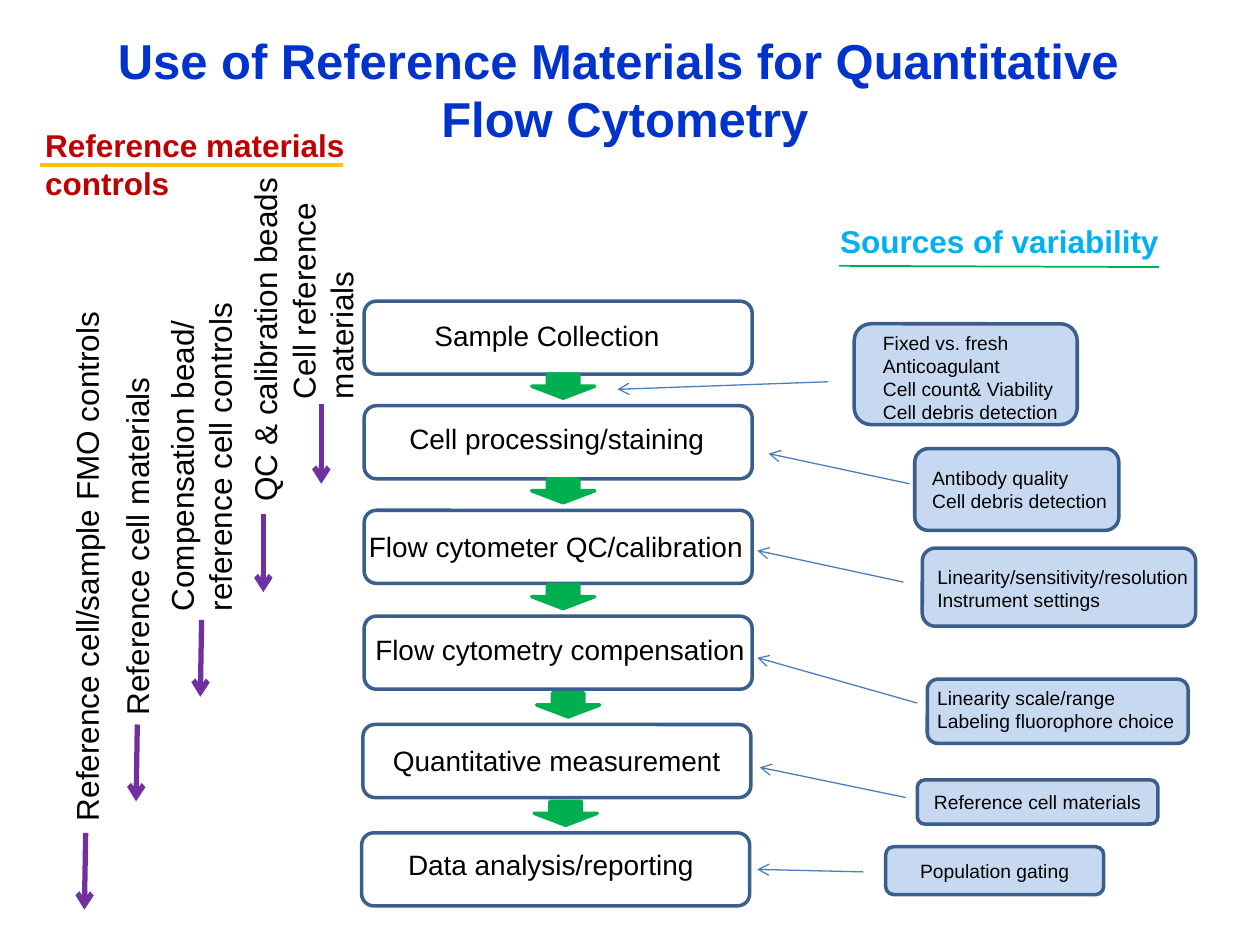
"""Build the slide on reference materials for quantitative flow cytometry."""
import pptx
import pptx.dml.color
import pptx.enum.shapes
import pptx.enum.text
import pptx.oxml
import pptx.oxml.ns
import pptx.util

SHAPE = pptx.enum.shapes.MSO_SHAPE
ALIGN = pptx.enum.text.PP_ALIGN
ANCHOR = pptx.enum.text.MSO_ANCHOR
FONT = "Arial"
COLORS = {
    "title": "0033CC", "text": "000000", "controls": "C00000", "sources": "00B0F0",
    "border": "3A5F8C", "note": "C6D9F1", "green": "00B050", "gold": "FFC000",
    "purple": "7030A0", "link": "4B7EBC",
}

TITLE = ["Use of Reference Materials for Quantitative ", "Flow Cytometry"]
HEADINGS = [
    (["Reference materials", "controls"], (0.26, 0.95, 2.69, 0.71), "controls"),
    (["Sources of variability"], (6.57, 1.71, 3.53, 0.4), "sources"),
]
RULES = [
    ((0.32, 1.31), (2.72, 1.31), "gold", 2.25),
    ((6.66, 2.11), (9.2, 2.12), "green", 1),
]

STEP_W, STEP_H = 3.08, 0.58
ARROW_W, ARROW_H, ARROW_GAP = 0.5, 0.19, 0.06
STEPS = [
    ("Sample Collection", (2.89, 2.39), (3.35, 2.48, 2.23), None),
    ("Cell processing/staining", (2.89, 3.22), (3.15, 3.3, 2.85), 4.22),
    ("Flow cytometer QC/calibration", (2.89, 4.05), (2.83, 4.15, 3.42), 4.22),
    ("Flow cytometry compensation", (2.89, 4.89), (2.88, 4.97, 3.25), 4.22),
    ("Quantitative measurement", (2.88, 5.75), (3.02, 5.85, 2.94), 4.26),
    ("Data analysis/reporting", (2.87, 6.61), (3.14, 6.68, 2.79), 4.24),
]

CONTROLS = [
    (["Reference cell/sample FMO controls"], (-1.56, 4.17, 4.49, 0.4), (0.68, 6.61), (0.67, 7.22)),
    (["Reference cell materials"], (-0.55, 3.94, 3.27, 0.4), (1.09, 5.75), (1.08, 6.36)),
    (["Compensation bead/", "reference cell controls"], (0.26, 3.26, 2.67, 0.71),
     (1.6, 4.92), (1.59, 5.53)),
    (["QC & calibration beads"], (0.7, 2.48, 2.8, 0.4), (2.09, 4.08), (2.09, 4.7)),
    (["Cell reference", "materials"], (1.64, 1.99, 1.84, 0.71), (2.55, 3.21), (2.55, 3.84)),
]

SOURCES = [
    (["Fixed vs. fresh", "Anticoagulant", "Cell count& Viability", "Cell debris detection"],
     (6.78, 2.57, 1.77, 0.8), (6.91, 2.58, 1.6, 0.84), (6.57, 3.03), (4.9, 3.09)),
    (["Antibody quality", "Cell debris detection"],
     (7.26, 3.56, 1.62, 0.65), (7.3, 3.65, 1.6, 0.47), (7.22, 3.84), (6.1, 3.6)),
    (["Linearity/sensitivity/resolution", "Instrument settings"],
     (7.32, 4.35, 2.17, 0.62), (7.34, 4.44, 2.21, 0.47), (7.17, 4.62), (6.01, 4.37)),
    (["Linearity scale/range", "Labeling fluorophore choice"],
     (7.36, 5.39, 2.07, 0.51), (7.34, 5.4, 2.2, 0.47), (7.28, 5.58), (6.01, 5.22)),
    (["Reference cell materials"],
     (7.28, 6.19, 1.91, 0.35), None, (7.19, 6.33), (6.03, 6.09)),
    (["Population gating"],
     (7.03, 6.72, 1.73, 0.38), None, (6.85, 6.92), (6.01, 6.9)),
]


def cm(inches):
    return pptx.util.Cm(inches * 2.54)


def rgb(name):
    return pptx.dml.color.RGBColor.from_string(COLORS[name])


def add_run(p, text, size, color, bold=False):
    r = p.add_run()
    r.text = text
    r.font.name, r.font.size, r.font.bold = FONT, pptx.util.Pt(size), bold
    r.font.color.rgb = rgb(color)


def write(tf, lines, size, color="text", bold=False, align=ALIGN.LEFT):
    for i, line in enumerate(lines):
        p = tf.paragraphs[0] if i == 0 else tf.add_paragraph()
        p.alignment = align
        add_run(p, line, size, color, bold)


def add_text(s, lines, box, size, color="text", bold=False, wrap=True, rotation=0):
    sp = s.shapes.add_textbox(*map(cm, box))
    sp.rotation = rotation
    sp.text_frame.word_wrap = wrap
    sp.text_frame.auto_size = pptx.enum.text.MSO_AUTO_SIZE.SHAPE_TO_FIT_TEXT
    write(sp.text_frame, lines, size, color, bold)


def add_box(s, kind, box, line, fill=None):
    sp = s.shapes.add_shape(kind, *map(cm, box))
    sp.shadow.inherit = False
    if fill:
        sp.fill.solid()
        sp.fill.fore_color.rgb = rgb(fill)
    else:
        sp.fill.background()
    sp.line.color.rgb = rgb(line)
    sp.line.width = pptx.util.Pt(2)
    return sp


def add_line(s, start, end, color, width, arrow=True):
    c = s.shapes.add_connector(pptx.enum.shapes.MSO_CONNECTOR.STRAIGHT,
                               *map(cm, start + end))
    c.line.color.rgb = rgb(color)
    c.line.width = pptx.util.Pt(width)
    if arrow:
        tail = pptx.oxml.parse_xml(
            f'<a:tailEnd {pptx.oxml.ns.nsdecls("a")} type="arrow"/>')
        c.line._get_or_add_ln().append(tail)
    effects = pptx.oxml.parse_xml(f'<a:effectLst {pptx.oxml.ns.nsdecls("a")}/>')
    c._element.spPr.append(effects)


def add_title(s):
    tf = s.shapes.add_textbox(*map(cm, (-0.04, 0.08, 10, 1.25))).text_frame
    tf.word_wrap = True
    tf.vertical_anchor = ANCHOR.MIDDLE
    p = tf.paragraphs[0]
    p.alignment = ALIGN.CENTER
    for i, line in enumerate(TITLE):
        if i:
            p.add_line_break()
        add_run(p, line, 28, "title", True)


def main():
    prs = pptx.Presentation()
    prs.slide_width, prs.slide_height = cm(10), cm(7.5)
    s = prs.slides.add_slide(prs.slide_layouts[6])
    add_title(s)

    for label, (x, y), text_box, arrow_x in STEPS:
        add_box(s, SHAPE.ROUNDED_RECTANGLE, (x, y, STEP_W, STEP_H), "border")
        add_text(s, [label], text_box + (0.37,), 16)
        if arrow_x:
            arrow_y = y - ARROW_GAP - ARROW_H
            add_box(s, SHAPE.DOWN_ARROW, (arrow_x, arrow_y, ARROW_W, ARROW_H),
                    "green", "green")

    for lines, box, text_box, start, end in SOURCES:
        sp = add_box(s, SHAPE.ROUNDED_RECTANGLE, box, "border", "note")
        if text_box:
            add_text(s, lines, text_box, 11, wrap=False)
        else:
            sp.text_frame.vertical_anchor = ANCHOR.MIDDLE
            write(sp.text_frame, lines, 11, align=ALIGN.CENTER)
        add_line(s, start, end, "link", 0.75)

    for lines, box, start, end in CONTROLS:
        add_text(s, lines, box, 18, wrap=False, rotation=270)
        add_line(s, start, end, "purple", 3)

    for start, end, color, width in RULES:
        add_line(s, start, end, color, width, arrow=False)
    for lines, box, color in HEADINGS:
        add_text(s, lines, box, 18, color, bold=True)
    prs.save("out.pptx")


if __name__ == "__main__":
    main()
